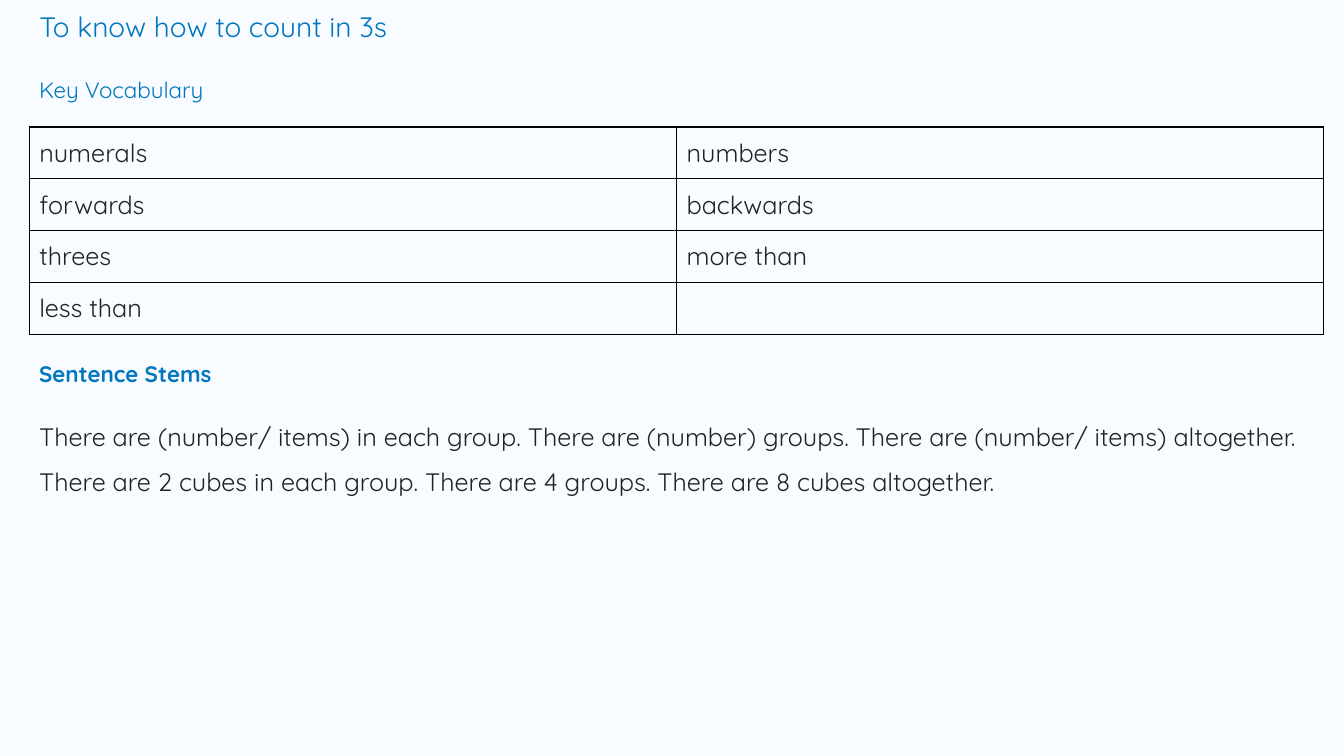
import dataclasses

import lxml.etree
import pptx
import pptx.dml.color
import pptx.enum.text
import pptx.oxml.ns
import pptx.util

Inches = pptx.util.Inches
Pt = pptx.util.Pt


@dataclasses.dataclass(frozen=True)
class Theme:
    font: str = "Quicksand"
    background: str = "F8FBFF"
    heading: str = "0277BD"
    ink: str = "222222"
    border: str = "000000"
    border_width: float = 1
    title_size: float = 20
    heading_size: float = 16
    body_size: float = 18


def rgb(value):
    return pptx.dml.color.RGBColor.from_string(value)


def write_text(frame, text, *, font, size, color, bold=False, spacing=1.0):
    for index, line in enumerate(text.split("\n")):
        para = frame.paragraphs[0] if index == 0 else frame.add_paragraph()
        para.alignment = pptx.enum.text.PP_ALIGN.LEFT
        para.line_spacing = spacing
        para.space_before = Pt(0)
        span = para.add_run()
        span.text = line
        span.font.name = font
        span.font.size = Pt(size)
        span.font.bold = bold
        span.font.color.rgb = rgb(color)


class LessonPage:
    def __init__(self, deck, theme):
        self.theme = theme
        self.page = deck.slides.add_slide(deck.slide_layouts.get_by_name("Title Only"))
        fill = self.page.background.fill
        fill.solid()
        fill.fore_color.rgb = rgb(theme.background)

    def fill_box(self, box, text, **text_format):
        frame = box.text_frame
        frame.word_wrap = True
        frame.auto_size = pptx.enum.text.MSO_AUTO_SIZE.NONE
        frame.vertical_anchor = pptx.enum.text.MSO_ANCHOR.TOP
        write_text(frame, text, font=self.theme.font, **text_format)

    def title(self, text, left, top, width, height):
        box = self.page.shapes.title
        box.left, box.top = Inches(left), Inches(top)
        box.width, box.height = Inches(width), Inches(height)
        self.fill_box(box, text, size=self.theme.title_size, color=self.theme.heading)

    def text(self, text, left, top, width, height, **text_format):
        box = self.page.shapes.add_textbox(
            Inches(left), Inches(top), Inches(width), Inches(height)
        )
        self.fill_box(box, text, **text_format)

    def heading(self, text, left, top, bold=False):
        self.text(text, left, top, 2.97, 0.46, size=self.theme.heading_size,
                  color=self.theme.heading, bold=bold)

    def body(self, text, left, top, width, height):
        self.text(text, left, top, width, height, size=self.theme.body_size,
                  color=self.theme.ink, spacing=1.5)

    def border_cell(self, cell):
        properties = cell._tc.get_or_add_tcPr()
        for index, side in enumerate(("lnL", "lnR", "lnT", "lnB")):
            line = lxml.etree.Element(
                pptx.oxml.ns.qn(f"a:{side}"), w=str(Pt(self.theme.border_width))
            )
            fill = lxml.etree.SubElement(line, pptx.oxml.ns.qn("a:solidFill"))
            lxml.etree.SubElement(
                fill, pptx.oxml.ns.qn("a:srgbClr"), val=self.theme.border
            )
            properties.insert(index, line)

    def table(self, rows, left, top, width, height):
        grid = self.page.shapes.add_table(
            len(rows), len(rows[0]),
            Inches(left), Inches(top), Inches(width), Inches(height),
        ).table
        grid.first_row = False
        grid.horz_banding = False
        for row_index, words in enumerate(rows):
            for column_index, word in enumerate(words):
                cell = grid.cell(row_index, column_index)
                cell.margin_left = cell.margin_right = Inches(0.1)
                cell.margin_top = cell.margin_bottom = Inches(0.1)
                cell.fill.background()
                self.border_cell(cell)
                if word:
                    write_text(cell.text_frame, word, font=self.theme.font,
                               size=self.theme.body_size, color=self.theme.ink)
                else:
                    cell.text_frame.paragraphs[0].font.size = Pt(self.theme.body_size)


VOCABULARY = [
    ("numerals", "numbers"),
    ("forwards", "backwards"),
    ("threes", "more than"),
    ("less than", ""),
]

SENTENCE_STEMS = (
    "There are (number/ items) in each group. There are (number) groups. "
    "There are (number/ items) altogether.\n"
    "There are 2 cubes in each group. There are 4 groups. "
    "There are 8 cubes altogether."
)


def main():
    deck = pptx.Presentation()
    deck.slide_width, deck.slide_height = Inches(13.33), Inches(7.5)
    lesson = LessonPage(deck, Theme())
    left, width = 0.29, 12.84
    lesson.title("To know how to count in 3s", left, 0.04, 12.34, 0.44)
    lesson.heading("Key Vocabulary", left, 0.71)
    lesson.table(VOCABULARY, left, 1.26, width, 2)
    lesson.heading("Sentence Stems", left, 3.52, bold=True)
    lesson.body(SENTENCE_STEMS, left, 3.98, width, 1.41)
    deck.save("out.pptx")


if __name__ == "__main__":
    main()
